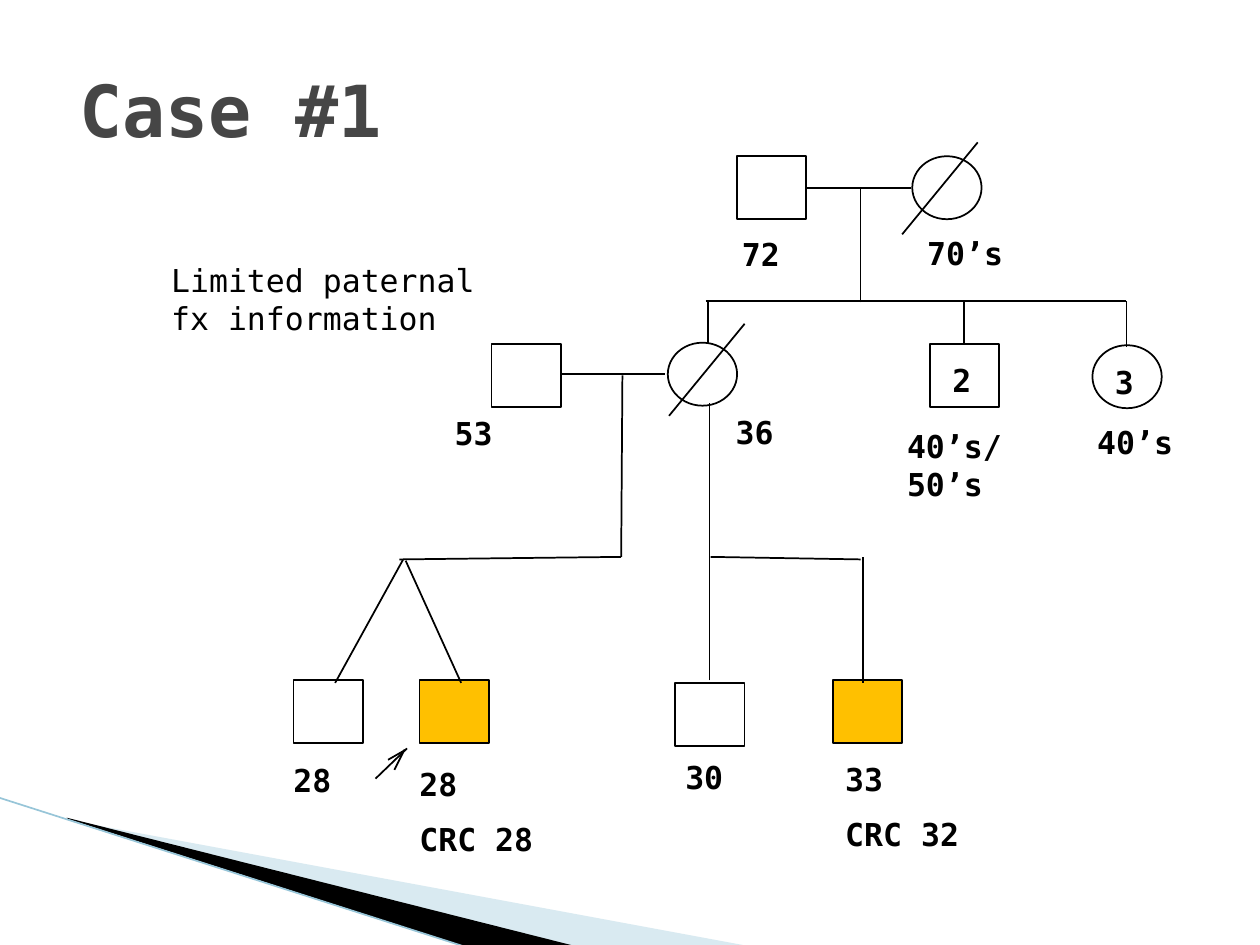
from lxml import etree
from pptx import Presentation
from pptx.dml.color import RGBColor
from pptx.enum.shapes import MSO_CONNECTOR, MSO_SHAPE
from pptx.enum.text import MSO_ANCHOR
from pptx.oxml.ns import qn
from pptx.util import Inches, Pt

RECTANGLE, OVAL = MSO_SHAPE.RECTANGLE, MSO_SHAPE.OVAL
STRAIGHT = MSO_CONNECTOR.STRAIGHT
TOP, MIDDLE = MSO_ANCHOR.TOP, MSO_ANCHOR.MIDDLE

BLACK = RGBColor(0x00, 0x00, 0x00)
WHITE = RGBColor(0xFF, 0xFF, 0xFF)
GRAY = RGBColor(0x46, 0x46, 0x46)
GOLD = RGBColor(0xFF, 0xC0, 0x00)
PALE_BLUE = RGBColor(0xA0, 0xCB, 0xDC)
EDGE_BLUE = RGBColor(0x97, 0xC5, 0xD8)
FONT = "DejaVu Sans Mono"

SLIDE_WIDTH, SLIDE_HEIGHT = 10, 7.5
SYMBOL_WIDTH, SYMBOL_HEIGHT = 0.55, 0.5

# Content: corner bands as (points, fill, opacity in percent)
BANDS = [
    ([(0.55, 6.51), (5.95, 7.51), (4.56, 7.51), (0.55, 6.5)], PALE_BLUE, 40),
    ([(0.53, 6.49), (4.57, 7.51), (3.72, 7.52), (0.54, 6.5)], BLACK, 100),
]

# Family members: shape, left, top, fill
MEMBERS = [
    (RECTANGLE, 5.85, 1.24, None), (OVAL, 7.24, 1.24, WHITE),
    (RECTANGLE, 3.9, 2.73, None), (OVAL, 5.3, 2.72, WHITE),
    (RECTANGLE, 7.38, 2.73, None), (OVAL, 8.67, 2.74, None),
    (RECTANGLE, 2.33, 5.4, None), (RECTANGLE, 3.33, 5.4, GOLD),
    (RECTANGLE, 5.36, 5.42, None), (RECTANGLE, 6.61, 5.4, GOLD),
]

# Labels: paragraphs, left, top, width, height
LABELS = [
    (["72"], 5.79, 1.82, 0.82, 0.86), (["70’s"], 7.26, 1.81, 0.82, 0.4),
    (["53"], 3.51, 3.24, 0.74, 0.4), (["36"], 5.74, 3.23, 0.75, 0.4),
    (["2"], 7.46, 2.82, 0.75, 0.4), (["3"], 8.75, 2.83, 0.75, 0.4),
    (["40’s/50’s"], 7.1, 3.34, 1.39, 0.4), (["40’s"], 8.61, 3.31, 0.82, 0.4),
    (["28"], 2.23, 5.99, 0.75, 0.4), (["28", "CRC 28"], 3.23, 6.02, 1.11, 0.86),
    (["30"], 5.34, 5.97, 0.75, 0.4), (["33", "CRC 32"], 6.61, 5.98, 1.31, 0.86),
]

# Lines: start x, start y, end x, end y
COUPLES = [(6.4, 1.49, 7.23, 1.49), (4.45, 2.97, 5.28, 2.97)]
DESCENT = [
    (6.83, 2.4, 6.83, 1.49), (5.6, 2.39, 8.94, 2.39),
    (5.62, 2.73, 5.62, 2.4), (7.65, 2.72, 7.65, 2.39), (8.94, 2.75, 8.94, 2.39),
    (4.94, 2.98, 4.93, 4.42), (3.17, 4.44, 4.93, 4.42),
    (2.66, 5.42, 3.2, 4.44), (3.66, 5.42, 3.22, 4.45),
    (5.63, 4.42, 5.63, 3.2), (5.64, 4.42, 6.83, 4.44),
    (5.63, 5.4, 5.63, 4.38), (6.85, 5.42, 6.85, 4.42),
]
DECEASED = [(7.16, 1.86, 7.76, 1.13), (5.31, 3.3, 5.91, 2.57)]
PROBAND_ARROW = [
    (2.98, 6.18, 3.23, 5.94), (3.08, 6.03, 3.22, 5.95), (3.13, 6.11, 3.21, 5.95),
]


def add_text(slide, paragraphs, left, top, width, height, *, size=18,
             bold=True, color=BLACK, anchor=TOP, gap=10):
    box = slide.shapes.add_textbox(*map(Inches, (left, top, width, height)))
    frame = box.text_frame
    frame.word_wrap = True
    frame.vertical_anchor = anchor
    for index, text in enumerate(paragraphs):
        paragraph = frame.add_paragraph() if index else frame.paragraphs[0]
        if index:
            paragraph.space_before = Pt(gap)
        run = paragraph.add_run()
        run.text = text
        run.font.name = FONT
        run.font.size = Pt(size)
        run.font.bold = bold
        run.font.color.rgb = color


def add_line(parent, ends, color=BLACK, width=1):
    line = parent.shapes.add_connector(STRAIGHT, *map(Inches, ends))
    line.line.color.rgb = color
    line.line.width = Pt(width)
    etree.SubElement(line._element.spPr, qn("a:effectLst"))


def add_band(slide, points, color, opacity):
    corners = [(Inches(x), Inches(y)) for x, y in points]
    builder = slide.shapes.build_freeform(*corners[0])
    builder.add_line_segments(corners[1:], close=True)
    band = builder.convert_to_shape()
    band.shadow.inherit = False
    band.fill.solid()
    band.fill.fore_color.rgb = color
    band.line.fill.background()
    if opacity < 100:
        color_element = band._element.spPr.find(".//" + qn("a:srgbClr"))
        alpha = etree.SubElement(color_element, qn("a:alpha"))
        alpha.set("val", str(opacity * 1000))


def add_member(slide, kind, left, top, fill):
    place = map(Inches, (left, top, SYMBOL_WIDTH, SYMBOL_HEIGHT))
    member = slide.shapes.add_shape(kind, *place)
    member.shadow.inherit = False
    member.line.color.rgb = BLACK
    member.line.width = Pt(1)
    if fill is None:
        member.fill.background()
    else:
        member.fill.solid()
        member.fill.fore_color.rgb = fill


def main():
    presentation = Presentation()
    presentation.slide_width = Inches(SLIDE_WIDTH)
    presentation.slide_height = Inches(SLIDE_HEIGHT)
    slide = presentation.slides.add_slide(presentation.slide_layouts[6])

    # Corner decoration
    for band in BANDS:
        add_band(slide, *band)
    add_line(slide, (-0.01, 6.33, 3.71, 7.52), EDGE_BLUE, 0.95)

    # Title and note
    add_text(slide, ["Case #1"], 0.53, 0.24, 9, 1.25, size=41, color=GRAY,
             anchor=MIDDLE)
    add_text(slide, ["Limited paternal fx information"], 1.26, 2.02, 2.69, 1.01,
             bold=False)

    # Pedigree
    for member in MEMBERS:
        add_member(slide, *member)
    for ends in COUPLES + DESCENT + DECEASED:
        add_line(slide, ends)
    arrow = slide.shapes.add_group_shape()
    for ends in PROBAND_ARROW:
        add_line(arrow, ends)
    for label in LABELS:
        add_text(slide, *label)

    presentation.save("out.pptx")


if __name__ == "__main__":
    main()
